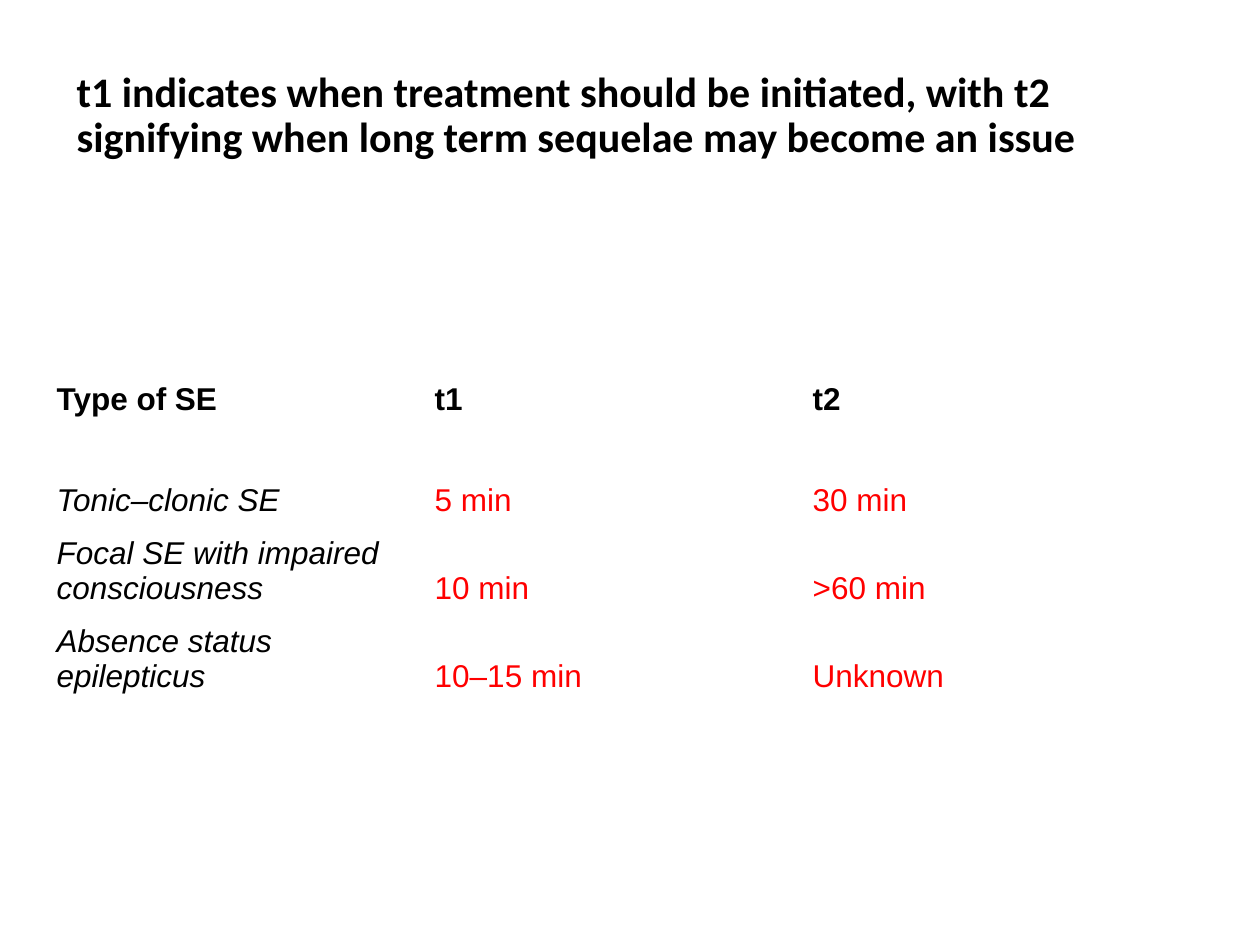
from pptx import Presentation
from pptx.dml.color import RGBColor
from pptx.enum.text import MSO_ANCHOR
from pptx.util import Pt

COLORS = {"ink": "000000", "time": "FF0000"}
TITLE = ("t1 indicates when treatment should be initiated, with t2 "
         "signifying when long term sequelae may become an issue")
HEAD = ("Type of SE", "t1", "t2")
TIMES = [
    ("Tonic–clonic SE", "5 min", "30 min"),
    ("Focal SE with impaired consciousness", "10 min", ">60 min"),
    ("Absence status epilepticus", "10–15 min", "Unknown"),
]
WIDTH = 216
HEIGHTS = (125.3, 28.1, 28.1, 49, 39.6)


def write(frame, text, font="Arial", size=18, color="ink",
          bold=False, italic=False, space=None):
    """Put one formatted paragraph into a text frame."""
    frame.word_wrap = True
    para = frame.paragraphs[0]
    para.line_spacing = space
    run = para.add_run()
    run.text = text
    run.font.name = font
    run.font.size = Pt(size)
    run.font.bold = bold
    run.font.italic = italic
    run.font.color.rgb = RGBColor.from_string(COLORS[color])


def add_title(slide):
    box = slide.shapes.add_textbox(Pt(36.7), Pt(21.6), Pt(611.3), Pt(90))
    box.text_frame.vertical_anchor = MSO_ANCHOR.MIDDLE
    write(box.text_frame, TITLE, font="Calibri", size=24, bold=True, space=0.9)


def add_times(slide):
    rows, cols = len(HEIGHTS), len(HEAD)
    table = slide.shapes.add_table(
        rows, cols, Pt(25.2), Pt(116.6),
        Pt(WIDTH * cols), Pt(sum(HEIGHTS))).table
    table.first_row = table.horz_banding = False
    for col in table.columns:
        col.width = Pt(WIDTH)
    for row, height in zip(table.rows, HEIGHTS):
        row.height = Pt(height)
    for cell in table.iter_cells():
        cell.fill.background()
        cell.vertical_anchor = MSO_ANCHOR.BOTTOM

    # Header, then an empty merged row
    for col, text in enumerate(HEAD):
        write(table.cell(0, col).text_frame, text, bold=True)
    table.cell(1, 0).merge(table.cell(1, cols - 1))

    # Seizure types in italics, times in red
    for row, texts in enumerate(TIMES, 2):
        for col, text in enumerate(texts):
            write(table.cell(row, col).text_frame, text,
                  color="time" if col else "ink", italic=col == 0)


def main():
    deck = Presentation()
    deck.slide_width, deck.slide_height = Pt(720), Pt(540)
    slide = deck.slides.add_slide(deck.slide_layouts[6])
    add_title(slide)
    add_times(slide)
    deck.save("out.pptx")


if __name__ == "__main__":
    main()
